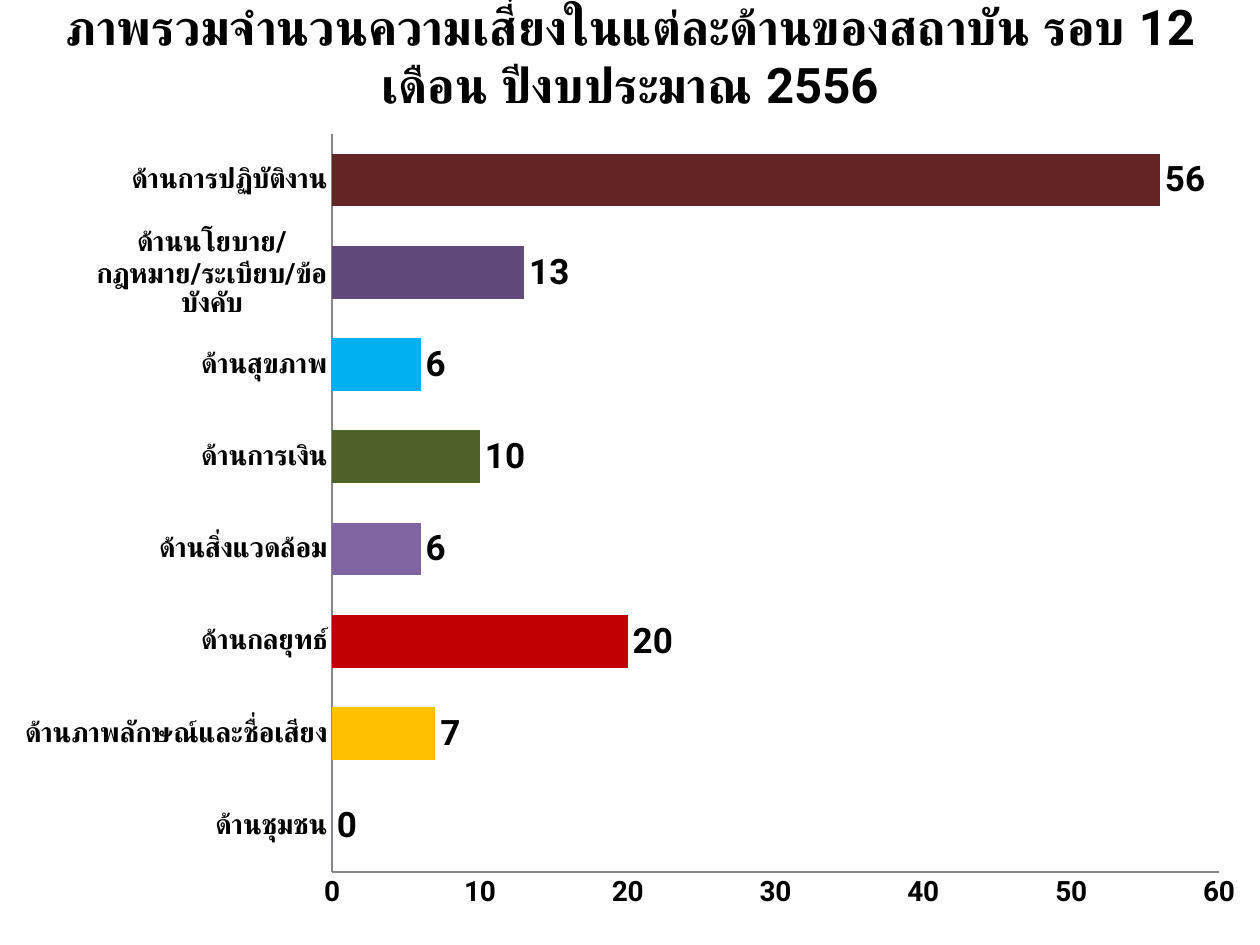
from dataclasses import dataclass

from lxml import etree
from pptx import Presentation
from pptx import util as u
from pptx.chart.data import CategoryChartData
from pptx.dml.color import RGBColor
from pptx.enum import chart as ch
from pptx.enum import text
from pptx.oxml import ns

PX = u.Inches(1) // 126


@dataclass(frozen=True)
class Theme:
    font: str = "Roboto"
    ink: str = "000000"
    axis: str = "868686"
    bar: str = "4F81BD"
    title_size: int = 28
    axis_size: int = 16
    label_size: int = 20


THEME = Theme()

TITLE = "ภาพรวมจำนวนความเสี่ยงในแต่ละด้านของสถาบัน รอบ 12 เดือน ปีงบประมาณ 2556"

# Risk area, number of risks, bar colour; from the bottom bar to the top one
RISKS = [
    ("ด้านชุมชน", 0, THEME.bar),
    ("ด้านภาพลักษณ์และชื่อเสียง", 7, "FFC000"),
    ("ด้านกลยุทธ์", 20, "C00000"),
    ("ด้านสิ่งแวดล้อม", 6, "8064A2"),
    ("ด้านการเงิน", 10, "4F6228"),
    ("ด้านสุขภาพ", 6, "00B0F0"),
    ("ด้านนโยบาย/กฎหมาย/ระเบียบ/ข้อบังคับ", 13, "604A7B"),
    ("ด้านการปฏิบัติงาน", 56, "632523"),
]


def emu(box):
    return [length * PX for length in box]


def style_font(font, size):
    font.name = THEME.font
    font.size = u.Pt(size)
    font.bold = True
    font.color.rgb = RGBColor.from_string(THEME.ink)


def add_title(page, box):
    title = page.shapes.title
    title.left, title.top, title.width, title.height = emu(box)
    frame = title.text_frame
    frame.text = TITLE
    frame.word_wrap = True
    frame.auto_size = text.MSO_AUTO_SIZE.NONE
    frame.vertical_anchor = text.MSO_ANCHOR.MIDDLE
    para = frame.paragraphs[0]
    para.alignment = text.PP_ALIGN.CENTER
    style_font(para.runs[0].font, THEME.title_size)


def place_plot(chart, box, plot):
    """Fix the inner plot area; plot is relative to the chart's box, in px."""
    area = chart._chartSpace.chart.plotArea
    for old in area.findall(ns.qn("c:layout")):
        area.remove(old)
    layout = etree.Element(ns.qn("c:layout"))
    manual = etree.SubElement(layout, ns.qn("c:manualLayout"))
    width, height = box[2:]
    shares = [f"{part / whole:.4f}"
              for part, whole in zip(plot, (width, height, width, height))]
    settings = [("layoutTarget", "inner"), ("xMode", "edge"), ("yMode", "edge")]
    for tag, value in settings + list(zip("xywh", shares)):
        etree.SubElement(manual, ns.qn(f"c:{tag}")).set("val", value)
    area.insert(0, layout)


def style_axis(axis):
    axis.has_major_gridlines = False
    axis.major_tick_mark = axis.minor_tick_mark = ch.XL_TICK_MARK.NONE
    axis.format.line.color.rgb = RGBColor.from_string(THEME.axis)
    axis.format.line.width = u.Pt(0.75)
    style_font(axis.tick_labels.font, THEME.axis_size)


def add_risk_chart(page, box, plot_box):
    names, counts, colours = zip(*RISKS)
    data = CategoryChartData()
    data.categories = names
    data.add_series("Series 1", counts)
    chart = page.shapes.add_chart(
        ch.XL_CHART_TYPE.BAR_CLUSTERED, *emu(box), data).chart
    chart.has_legend = False
    chart.has_title = False
    style_font(chart.font, THEME.axis_size)
    style_axis(chart.category_axis)
    style_axis(chart.value_axis)
    chart.value_axis.minimum_scale = 0
    chart.value_axis.maximum_scale = 60
    chart.value_axis.major_unit = 10

    plot = chart.plots[0]
    plot.gap_width = 75
    plot.vary_by_categories = False
    plot.has_data_labels = True
    labels = plot.data_labels
    labels.show_value = True
    labels.position = ch.XL_LABEL_POSITION.OUTSIDE_END
    style_font(labels.font, THEME.label_size)

    series = plot.series[0]
    series.invert_if_negative = False
    for target, colour in [(series, THEME.bar)] + [
            (series.points[i], colour) for i, colour in enumerate(colours)]:
        target.format.fill.solid()
        target.format.fill.fore_color.rgb = RGBColor.from_string(colour)
    place_plot(chart, box, plot_box)


def main():
    deck = Presentation()
    deck.slide_width, deck.slide_height = emu((1260, 945))
    page = deck.slides.add_slide(deck.slide_layouts.get_by_name("Title Only"))
    add_title(page, (0, 0, 1260, 110))
    add_risk_chart(page, (0, 118, 1260, 808), (332, 16, 887, 738))
    deck.save("out.pptx")


if __name__ == "__main__":
    main()
